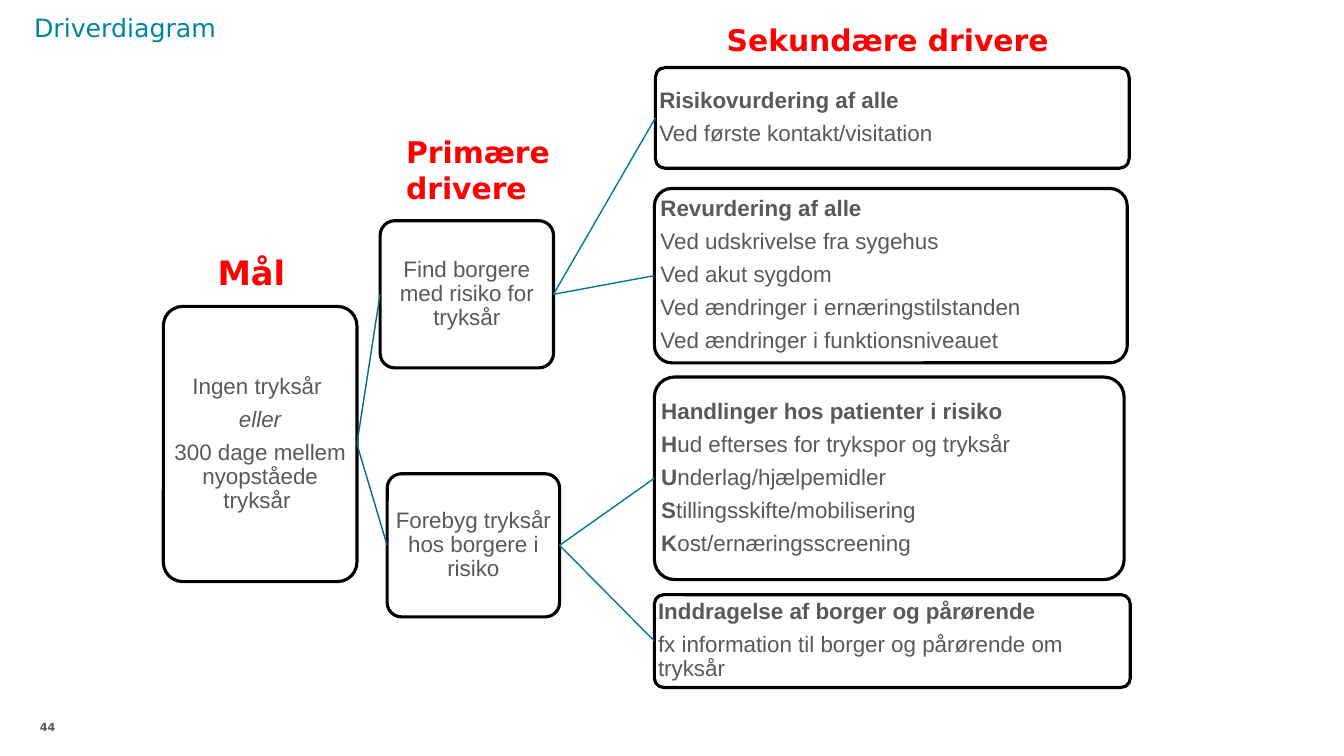
from lxml import etree
from pptx import Presentation
from pptx.dml.color import RGBColor
from pptx.enum.shapes import MSO_CONNECTOR, MSO_SHAPE
from pptx.enum.text import MSO_ANCHOR, PP_ALIGN
from pptx.oxml.ns import qn
from pptx.util import Inches, Pt

ROUNDED = MSO_SHAPE.ROUNDED_RECTANGLE
STRAIGHT = MSO_CONNECTOR.STRAIGHT
MIDDLE, TOP = MSO_ANCHOR.MIDDLE, MSO_ANCHOR.TOP
LEFT, CENTER, RIGHT = PP_ALIGN.LEFT, PP_ALIGN.CENTER, PP_ALIGN.RIGHT
LEFT_SITE, RIGHT_SITE = 1, 3


def color(hex_code):
    return RGBColor.from_string(hex_code)


def write(shape, paragraphs, look, para_look, inset, anchor):
    """Fill a shape with paragraphs, each a list of (text, extra font values)."""
    frame = shape.text_frame
    frame.word_wrap = True
    frame.vertical_anchor = anchor
    frame.margin_left = frame.margin_right = Inches(inset[0])
    frame.margin_top = frame.margin_bottom = Inches(inset[1])
    for index, spans in enumerate(paragraphs):
        para = frame.paragraphs[0] if index == 0 else frame.add_paragraph()
        for name, value in para_look.items():
            setattr(para, name, value)
        for text, extra in spans:
            span = para.add_run()
            span.text = text
            for name, value in {**look, **extra}.items():
                if name == "color":
                    span.font.color.rgb = color(value)
                else:
                    setattr(span.font, name, value)


deck = Presentation()
deck.slide_width, deck.slide_height = Inches(13.33), Inches(7.5)
page = deck.slides.add_slide(deck.slide_layouts[6])

# Goal, primary drivers and secondary drivers
BOLD, ITALIC, PLAIN = {"bold": True}, {"italic": True}, {}
drivers = {
    "goal": ((1.62, 3.04, 1.92, 2.73), CENTER, [
        [("Ingen tryksår ", PLAIN)],
        [(" eller ", ITALIC)],
        [("300 dage mellem nyopståede tryksår ", PLAIN)]]),
    "find": ((3.77, 2.19, 1.72, 1.46), CENTER, [
        [("Find borgere med risiko for tryksår", PLAIN)]]),
    "prevent": ((3.84, 4.7, 1.71, 1.42), CENTER, [
        [("Forebyg tryksår hos borgere i risiko", PLAIN)]]),
    "assess": ((6.5, 0.67, 4.7, 1), LEFT, [
        [("Risikovurdering af alle", BOLD)],
        [("Ved første kontakt/visitation", PLAIN)]]),
    "reassess": ((6.49, 1.87, 4.69, 1.73), LEFT, [
        [("Revurdering af alle", BOLD)],
        [("Ved udskrivelse fra sygehus", PLAIN)],
        [("Ved akut sygdom", PLAIN)],
        [("Ved ændringer i ernæringstilstanden", PLAIN)],
        [("Ved ændringer i funktionsniveauet", PLAIN)]]),
    "act": ((6.49, 3.74, 4.66, 2.01), LEFT, [
        [("Handlinger hos patienter i risiko", BOLD)],
        [("H", BOLD), ("ud efterses for trykspor og tryksår", PLAIN)],
        [("U", BOLD), ("nderlag/hjælpemidler", PLAIN)],
        [("S", BOLD), ("tillingsskifte/mobilisering", PLAIN)],
        [("K", BOLD), ("ost/ernæringsscreening", PLAIN)]]),
    "involve": ((6.49, 5.9, 4.72, 0.92), LEFT, [
        [("Inddragelse af borger og pårørende", BOLD)],
        [("fx information til borger og pårørende om tryksår", PLAIN)]]),
}
driver_look = {"name": "Arial", "size": Pt(16), "color": "595959"}
boxes = {}
for key, (place, align, paragraphs) in drivers.items():
    box = page.shapes.add_shape(ROUNDED, *map(Inches, place))
    box.adjustments[0] = 0.1
    box.shadow.inherit = False
    box.fill.solid()
    box.fill.fore_color.rgb = color("FFFFFF")
    box.line.color.rgb = color("000000")
    box.line.width = Pt(2.25)
    para_look = {"alignment": align, "line_spacing": 0.9, "space_after": Pt(6.3)}
    write(box, paragraphs, driver_look, para_look, (0.01, 0.01), MIDDLE)
    boxes[key] = box

# Links from each box to the drivers behind it
links = [
    ("goal", "find", "006B80"), ("goal", "prevent", "006B80"),
    ("find", "assess", "007991"), ("find", "reassess", "007991"),
    ("prevent", "act", "007991"), ("prevent", "involve", "007991"),
]
for start, end, tint in links:
    link = page.shapes.add_connector(STRAIGHT, 0, 0, 0, 0)
    link.begin_connect(boxes[start], RIGHT_SITE)
    link.end_connect(boxes[end], LEFT_SITE)
    link.line.color.rgb = color(tint)
    link.line.width = Pt(1)
    etree.SubElement(link.element.spPr, qn("a:effectLst"))

# Title, column headings and page number
labels = [
    ("Driverdiagram", (0.24, 0.07, 6.67, 0.4), 18, "0085A0", False, LEFT, (0.1, 0.05)),
    ("Mål", (2.06, 2.45, 0.94, 0.5), 24, "FF0000", True, LEFT, (0.1, 0.05)),
    ("Primære drivere", (3.93, 1.28, 2.82, 0.82), 21.3, "FF0000", True, LEFT, (0.1, 0.05)),
    ("Sekundære drivere", (7.11, 0.17, 3.53, 0.46), 21.3, "FF0000", True, LEFT, (0.1, 0.05)),
    ("44", (0.16, 7.15, 0.39, 0.35), 8, "595959", True, RIGHT, (0, 0)),
]
for text, place, size, tint, bold, align, inset in labels:
    label = page.shapes.add_textbox(*map(Inches, place))
    look = {"name": "DejaVu Sans", "size": Pt(size), "color": tint, "bold": bold}
    write(label, [[(text, PLAIN)]], look, {"alignment": align}, inset, TOP)

deck.save("out.pptx")
